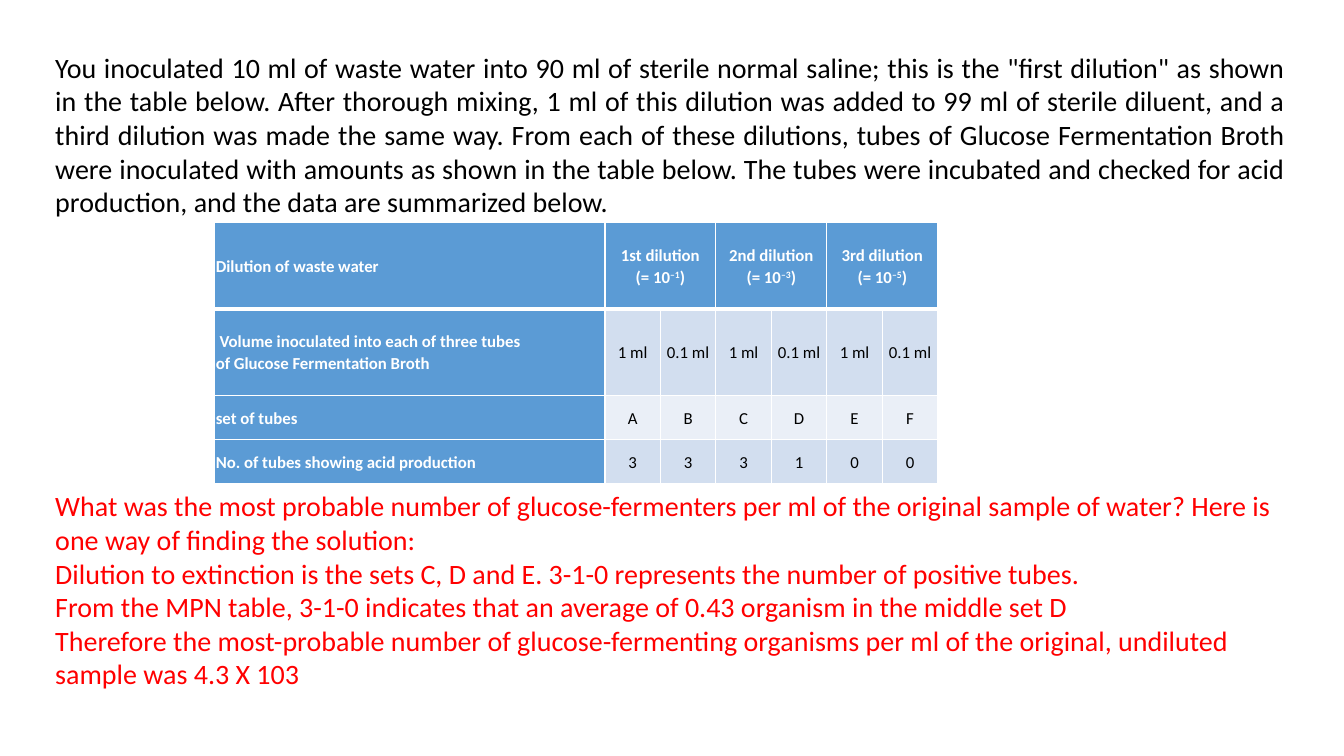
from dataclasses import dataclass

from lxml import etree
from pptx import Presentation
from pptx.dml.color import RGBColor
from pptx.enum.text import MSO_ANCHOR, MSO_AUTO_SIZE, PP_ALIGN
from pptx.oxml.ns import qn
from pptx.util import Pt

LEFT, CENTER, JUSTIFY = PP_ALIGN.LEFT, PP_ALIGN.CENTER, PP_ALIGN.JUSTIFY
MIDDLE = MSO_ANCHOR.MIDDLE
GROW = MSO_AUTO_SIZE.SHAPE_TO_FIT_TEXT

FONT = "Calibri"
COLORS = {
    "black": "000000",
    "white": "FFFFFF",
    "red": "FF0000",
    "header": "5B9BD5",
    "dark_band": "D2DEEF",
    "light_band": "EAEFF7",
}
LABEL_WIDTH, TUBE_WIDTH = 278.7, 39.65
ROW_HEIGHTS = (61.75, 61.75, 31.6, 31.6)
CELL_MARGIN = 0.72


@dataclass
class TextBlock:
    top: float
    height: float
    color: str
    alignment: PP_ALIGN
    paragraphs: list[str]


@dataclass
class Dilution:
    name: str
    exponent: str


@dataclass
class TubeRow:
    label: str
    values: list[str]
    band: str


TEXT_BLOCKS = [
    TextBlock(32.4, 128.2, "black", JUSTIFY, [
        'You inoculated 10 ml of waste water into 90 ml of sterile normal saline; this is the '
        '"first dilution" as shown in the table below. After thorough mixing, 1 ml of this dilution '
        'was added to 99 ml of sterile diluent, and a third dilution was made the same way. From each '
        'of these dilutions, tubes of Glucose Fermentation Broth were inoculated with amounts as shown '
        'in the table below. The tubes were incubated and checked for acid production, and the data '
        'are summarized below.',
    ]),
    TextBlock(345.6, 152.6, "red", LEFT, [
        "What was the most probable number of glucose-fermenters per ml of the original sample of "
        "water? Here is one way of finding the solution:",
        "Dilution to extinction is the sets C, D and E. 3-1-0 represents the number of positive tubes.",
        "From the MPN table, 3-1-0 indicates that an average of 0.43 organism in the middle set D",
        "Therefore the most-probable number of glucose-fermenting organisms per ml of the original, "
        "undiluted sample was 4.3 X 103",
    ]),
]
DILUTIONS = [
    Dilution("1st dilution", "–1"),
    Dilution("2nd dilution", "–3"),
    Dilution("3rd dilution", "–5"),
]
TUBE_ROWS = [
    TubeRow(" Volume inoculated into each of three tubes\nof Glucose Fermentation Broth",
            ["1 ml", "0.1 ml"] * 3, "dark_band"),
    TubeRow("set of tubes", list("ABCDEF"), "light_band"),
    TubeRow("No. of tubes showing acid production", list("333100"), "dark_band"),
]


def rgb(name: str) -> RGBColor:
    return RGBColor.from_string(COLORS[name])


def style_paragraph(paragraph, size: float, color: str, alignment: PP_ALIGN, bold: bool = False) -> None:
    paragraph.alignment = alignment
    font = paragraph.font
    font.name, font.size, font.bold = FONT, Pt(size), bold
    font.color.rgb = rgb(color)


def add_lines(paragraph, text: str) -> None:
    """Add text as runs, with a line break at each newline."""
    for index, line in enumerate(text.split("\n")):
        if index:
            paragraph.add_line_break()
        paragraph.add_run().text = line


def add_text_block(slide, block: TextBlock) -> None:
    shape = slide.shapes.add_textbox(Pt(32.4), Pt(block.top), Pt(892.8), Pt(block.height))
    frame = shape.text_frame
    frame.word_wrap = True
    frame.auto_size = GROW
    for index, text in enumerate(block.paragraphs):
        paragraph = frame.add_paragraph() if index else frame.paragraphs[0]
        add_lines(paragraph, text)
        style_paragraph(paragraph, 20, block.color, block.alignment)


def set_borders(cell, top: float, bottom: float) -> None:
    """Draw white cell borders; the side borders are 1 pt wide."""
    properties = cell._tc.get_or_add_tcPr()
    widths = {"a:lnL": 1, "a:lnR": 1, "a:lnT": top, "a:lnB": bottom}
    for index, (tag, width) in enumerate(widths.items()):
        line = etree.Element(qn(tag), w=str(Pt(width)))
        fill = etree.SubElement(line, qn("a:solidFill"))
        etree.SubElement(fill, qn("a:srgbClr"), val=COLORS["white"])
        properties.insert(index, line)


def style_cell(cell, fill: str, row: int) -> None:
    cell.fill.solid()
    cell.fill.fore_color.rgb = rgb(fill)
    cell.vertical_anchor = MIDDLE
    cell.margin_left = cell.margin_right = Pt(CELL_MARGIN)
    cell.margin_top = cell.margin_bottom = Pt(CELL_MARGIN)
    set_borders(cell, top=3 if row == 1 else 1, bottom=3 if row == 0 else 1)


def fill_cell(cell, text: str, is_header: bool, alignment: PP_ALIGN, exponent: str = "") -> None:
    paragraph = cell.text_frame.paragraphs[0]
    add_lines(paragraph, text)
    if exponent:
        superscript = paragraph.add_run()
        superscript.text = exponent
        superscript.font._element.set("baseline", "30000")
        paragraph.add_run().text = ")"
    paragraph.line_spacing = 1.07
    style_paragraph(paragraph, 12, "white" if is_header else "black", alignment, is_header)


def add_dilution_table(slide) -> None:
    tube_count = len(TUBE_ROWS[0].values)
    frame = slide.shapes.add_table(
        len(ROW_HEIGHTS), tube_count + 1, Pt(153.4), Pt(159.1),
        Pt(LABEL_WIDTH + tube_count * TUBE_WIDTH), Pt(sum(ROW_HEIGHTS)))
    table = frame.table
    table.first_row = table.horz_banding = False
    for index, column in enumerate(table.columns):
        column.width = Pt(TUBE_WIDTH if index else LABEL_WIDTH)
    for row, height in zip(table.rows, ROW_HEIGHTS):
        row.height = Pt(height)

    for column in range(tube_count + 1):
        style_cell(table.cell(0, column), "header", 0)
    fill_cell(table.cell(0, 0), "Dilution of waste water", True, LEFT)
    for index, dilution in enumerate(DILUTIONS):
        first = 1 + 2 * index
        cell = table.cell(0, first)
        cell.merge(table.cell(0, first + 1))
        fill_cell(cell, f"{dilution.name}\n(= 10", True, CENTER, dilution.exponent)

    for row, tube_row in enumerate(TUBE_ROWS, start=1):
        for column, text in enumerate([tube_row.label, *tube_row.values]):
            is_label = column == 0
            cell = table.cell(row, column)
            style_cell(cell, "header" if is_label else tube_row.band, row)
            fill_cell(cell, text, is_label, LEFT if is_label else CENTER)


def main() -> None:
    presentation = Presentation()
    presentation.slide_width, presentation.slide_height = Pt(960), Pt(540)
    slide = presentation.slides.add_slide(presentation.slide_layouts[6])
    introduction, solution = TEXT_BLOCKS
    add_text_block(slide, introduction)
    add_dilution_table(slide)
    add_text_block(slide, solution)
    presentation.save("out.pptx")


if __name__ == "__main__":
    main()
